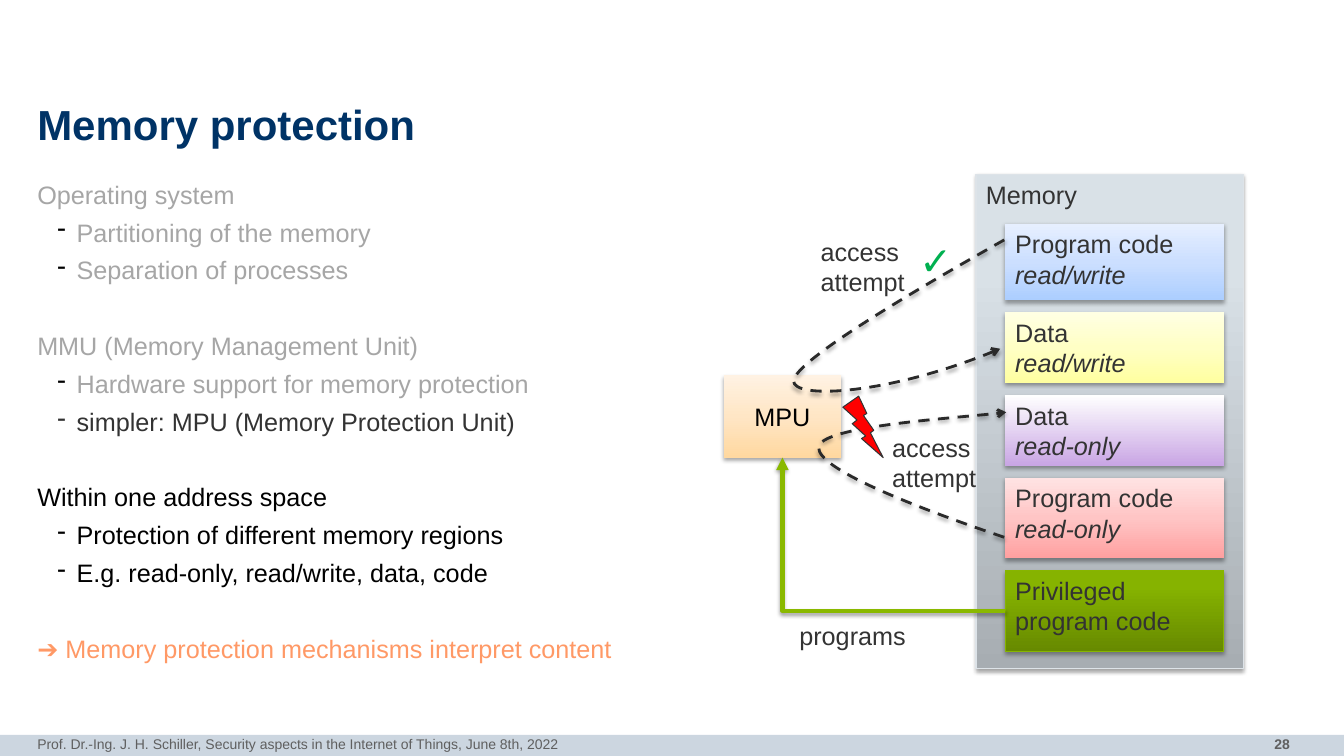
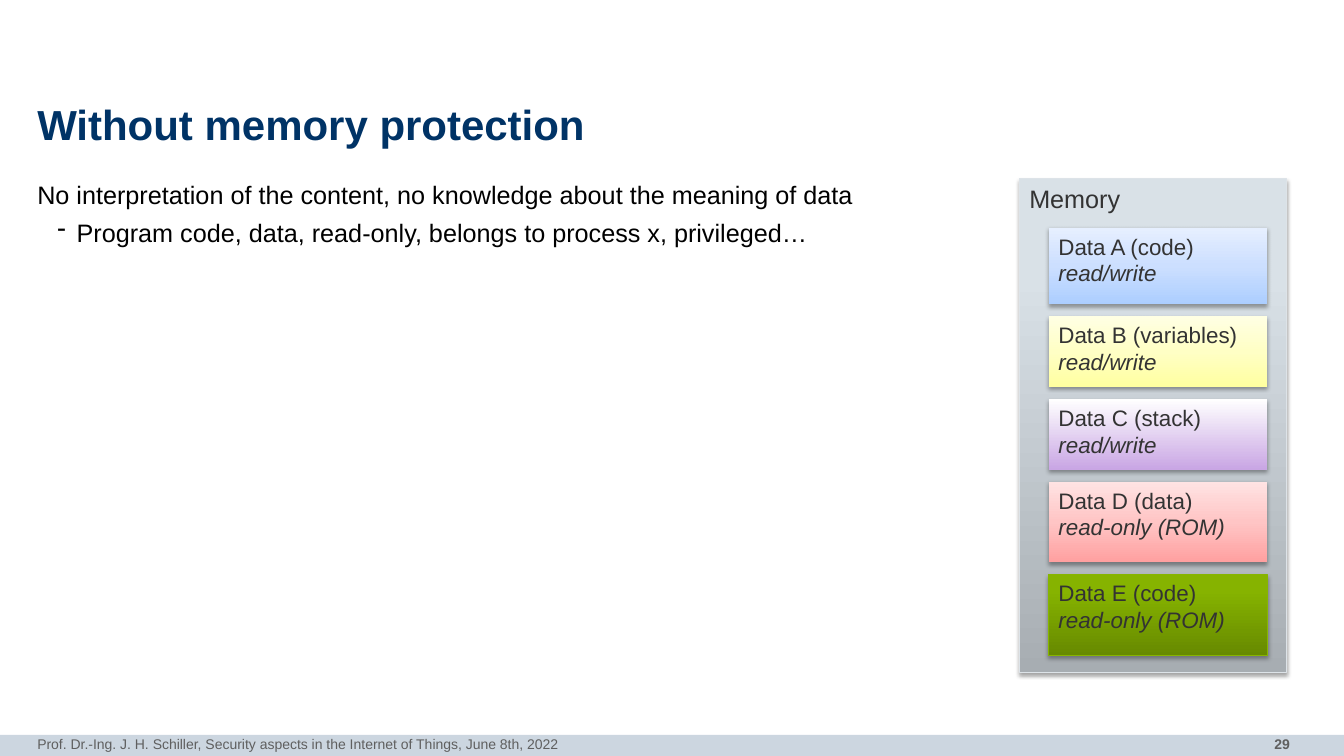
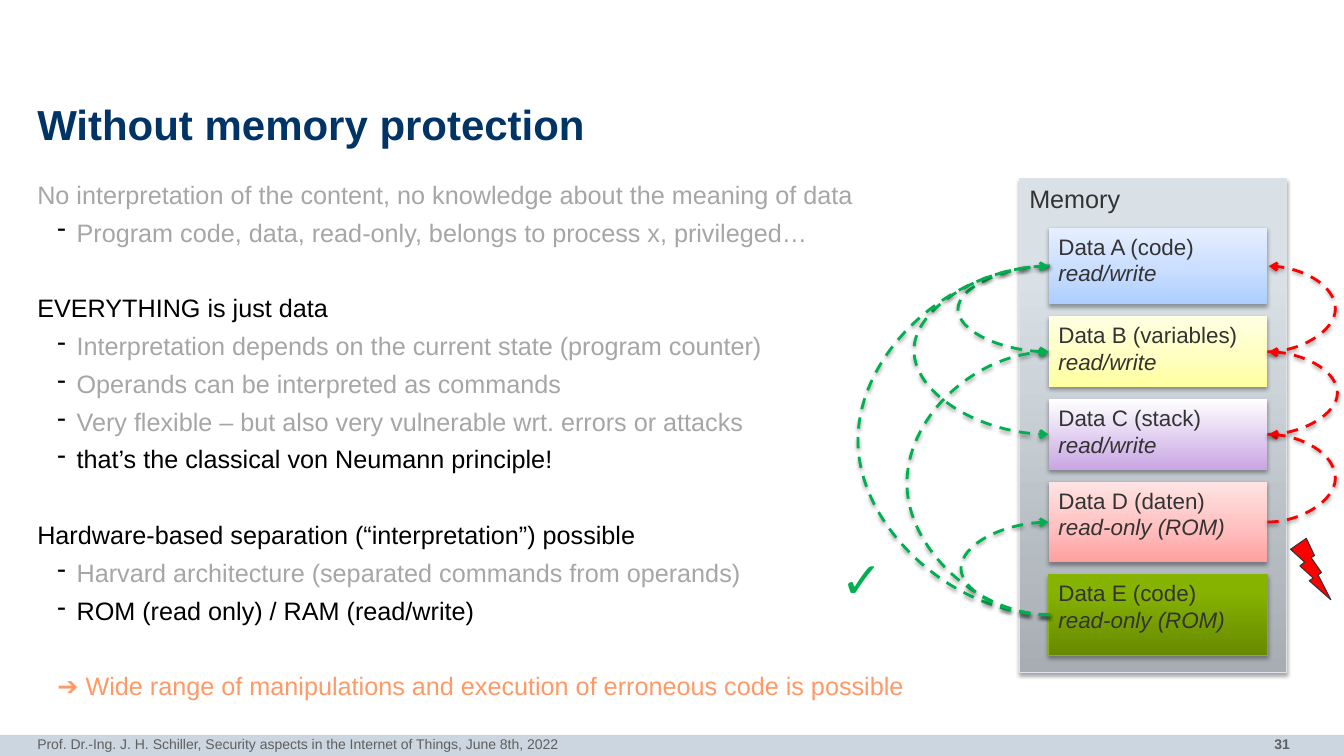
import dataclasses

import pptx
import pptx.dml.color
import pptx.enum.dml
import pptx.enum.shapes
import pptx.enum.text
import pptx.oxml
import pptx.oxml.ns
import pptx.util
from lxml import etree

qn = pptx.oxml.ns.qn
Pt = pptx.util.Pt
SHAPE = pptx.enum.shapes.MSO_SHAPE
CONNECTOR = pptx.enum.shapes.MSO_CONNECTOR
ALIGN = pptx.enum.text.PP_ALIGN
ANCHOR = pptx.enum.text.MSO_ANCHOR

COLUMNS, ROWS = 1333, 750
CELL = pptx.util.Inches(0.01)
LEFT_SITE, BOTTOM_SITE, RIGHT_SITE = 1, 2, 3
FOOTER = "Prof. Dr.-Ing. J. H. Schiller, Security aspects in the Internet of Things, June 8th, 2022"


@dataclasses.dataclass(frozen=True)
class Theme:
    """Colours, gradients and type sizes of the deck."""
    font: str = "Arial"
    title: str = "003366"
    black: str = "000000"
    dark: str = "333333"
    muted: str = "A6A6A6"
    accent: str = "FF9966"
    band: str = "CCD6E0"
    footer: str = "5F5F5F"
    dash: str = "2A2A2A"
    allowed: str = "00B050"
    denied: str = "FF0000"
    program: str = "8AB900"
    panel_line: str = "DDE3E8"
    green_line: str = "87B500"
    grey: tuple = ((0, "A7ADB2"), (80, "D9E1E7"), (100, "DAE2E9"))
    blue: tuple = ((0, "ACCEFF"), (50, "CCDFFF"), (100, "E6EFFF"))
    yellow: tuple = ((0, "FFFFA0"), (50, "FFFFC5"), (100, "FFFFE3"))
    purple: tuple = ((0, "C9A6E4"), (100, "FFFFFF"))
    red: tuple = ((0, "FFA0A0"), (50, "FFC5C5"), (100, "FFE3E3"))
    green: tuple = ((0, "678A00"), (80, "86B300"), (100, "86B400"))
    orange: tuple = ((0, "FFD8A0"), (50, "FFE6C5"), (100, "FFF2E3"))
    title_size: int = 30
    body_size: int = 18
    block_size: int = 16
    footer_size: int = 10


T = Theme()


@dataclasses.dataclass(frozen=True)
class Box:
    """A region in grid cells."""
    x: float
    y: float
    w: float
    h: float

    def sub(self, dx, dy, w, h):
        """Return a region offset from this one's corner."""
        return Box(self.x + dx, self.y + dy, w, h)

    def emu(self):
        """Return left, top, width and height as lengths."""
        return [round(v * CELL) for v in (self.x, self.y, self.w, self.h)]


def rgb(code):
    """Return a colour object."""
    return pptx.dml.color.RGBColor.from_string(code)


def add_run(p, text, size, color, bold=False, italic=False):
    """Add styled runs, with a line break at each newline."""
    for i, part in enumerate(text.split("\n")):
        if i:
            p.add_line_break()
        r = p.add_run()
        r.text = part
        r.font.name = T.font
        r.font.size = Pt(size)
        r.font.bold = bold
        r.font.italic = italic
        r.font.color.rgb = rgb(color)


def next_paragraph(tf, i):
    """Return the first paragraph or a new one."""
    return tf.add_paragraph() if i else tf.paragraphs[0]


def add_text(s, box, lines, size, color, bold=False, wrap=False, insets=None,
             anchor=ANCHOR.TOP, align=None, spacing=None):
    """Add a text box with one paragraph per line."""
    tf = s.shapes.add_textbox(*box.emu()).text_frame
    tf.word_wrap = wrap
    tf.vertical_anchor = anchor
    if not wrap:
        tf.auto_size = pptx.enum.text.MSO_AUTO_SIZE.SHAPE_TO_FIT_TEXT
    if insets is not None:
        tf.margin_left = tf.margin_right = 0
        tf.margin_top = tf.margin_bottom = insets * CELL
    for i, line in enumerate(lines):
        p = next_paragraph(tf, i)
        p.alignment = align
        p.line_spacing = spacing
        add_run(p, line, size, color, bold)
    return tf


def add_shadow(sp, alpha=35, dist=1.8):
    """Give a shape or connector a soft shadow below."""
    props = sp._element.spPr
    effects = props.find(qn("a:effectLst"))
    if effects is None:
        effects = etree.SubElement(props, qn("a:effectLst"))
    shadow = etree.SubElement(effects, qn("a:outerShdw"), blurRad=str(Pt(3.1)),
                              dist=str(Pt(dist)), dir="5400000", rotWithShape="0")
    color = etree.SubElement(shadow, qn("a:srgbClr"), val=T.black)
    etree.SubElement(color, qn("a:alpha"), val=str(alpha * 1000))


def add_block(s, box, stops, lines, size, line=None, color=T.dark,
              anchor=ANCHOR.TOP, align=ALIGN.LEFT):
    """Add a gradient rectangle; lines after the first are italic."""
    sp = s.shapes.add_shape(SHAPE.RECTANGLE, *box.emu())
    sp.shadow.inherit = False
    sp.fill.gradient()
    sp.fill.gradient_angle = 90
    gs_list = sp._element.spPr.find(".//" + qn("a:gsLst"))
    for gs in list(gs_list):
        gs_list.remove(gs)
    for pos, code in stops:
        gs = etree.SubElement(gs_list, qn("a:gs"), pos=str(pos * 1000))
        etree.SubElement(gs, qn("a:srgbClr"), val=code)
    if line:
        sp.line.color.rgb = rgb(line)
        sp.line.width = Pt(0.75)
    else:
        sp.line.fill.background()
    add_shadow(sp)
    tf = sp.text_frame
    tf.word_wrap = False
    tf.vertical_anchor = anchor
    for i, text in enumerate(lines):
        p = next_paragraph(tf, i)
        p.alignment = align
        add_run(p, text, size, color, italic=i > 0)
    return sp


def style_arrow(sp, color, width=2, head="arrow", dashed=True):
    """Set line, arrowhead and shadow of an arrow."""
    sp.line.color.rgb = rgb(color)
    sp.line.width = Pt(width)
    if dashed:
        sp.line.dash_style = pptx.enum.dml.MSO_LINE.DASH
    etree.SubElement(sp.line._get_or_add_ln(), qn("a:tailEnd"), type=head)
    add_shadow(sp, 38, 1.6)


def add_link(s, kind, start, start_site, end, end_site):
    """Add a connector glued to two shapes."""
    c = s.shapes.add_connector(kind, 0, 0, 0, 0)
    c.begin_connect(start, start_site)
    c.end_connect(end, end_site)
    return c


def orient(c, turned, flipped):
    """Set half turn and vertical flip of a connector."""
    xfrm = c._element.spPr.find(qn("a:xfrm"))
    xfrm.attrib.pop("flipH", None)
    xfrm.set("rot", "10800000" if turned else "0")
    xfrm.set("flipV", "1" if flipped else "0")


def set_geometry(c, preset, **guides):
    """Set preset geometry and adjustments of a connector."""
    geom = c._element.spPr.find(qn("a:prstGeom"))
    geom.set("prst", preset)
    av = geom.find(qn("a:avLst"))
    if av is None:
        av = etree.SubElement(geom, qn("a:avLst"))
    for name, value in guides.items():
        etree.SubElement(av, qn("a:gd"), name=name, fmla=f"val {value}")


def add_side_arc(s, start, end, site, reach, color):
    """Link the same side of two blocks by an arc that reaches outwards."""
    c = add_link(s, CONNECTOR.CURVE, start, site, end, site)
    left_side = site == LEFT_SITE
    c.width = Pt(1)
    orient(c, left_side, (start.top < end.top) == left_side)
    set_geometry(c, "curvedConnector3", adj1=round(reach * CELL / Pt(1) * 100000))
    style_arrow(c, color)


def add_curve(s, box, points, color):
    """Draw a Bézier arrow through a start point and triples of points."""
    pts = [tuple(box.sub(dx, dy, 0, 0).emu()[:2]) for dx, dy in points]
    fb = s.shapes.build_freeform(*pts[0])
    fb.add_line_segments(pts[1:], close=False)
    sp = fb.convert_to_shape()
    outline = sp._element.spPr.find(".//" + qn("a:path"))
    segments = outline.findall(qn("a:lnTo"))
    for i in range(0, len(segments), 3):
        bezier = etree.SubElement(outline, qn("a:cubicBezTo"))
        for segment in segments[i:i + 3]:
            bezier.append(segment[0])
            outline.remove(segment)
    sp.shadow.inherit = False
    sp.fill.background()
    style_arrow(sp, color)


def add_bolt(s, box):
    """Add the red bolt that marks a refused access."""
    sp = s.shapes.add_shape(SHAPE.LIGHTNING_BOLT, *box.emu())
    sp.shadow.inherit = False
    sp.fill.solid()
    sp.fill.fore_color.rgb = rgb(T.denied)
    sp.line.color.rgb = rgb(T.dark)
    sp.line.width = Pt(0.75)


def add_body(s, box, lines):
    """Write heads, dashed items and leads, with a gap before each group."""
    tf = add_text(s, box, [], T.body_size, T.black, wrap=True, insets=0)
    for i, (kind, text, color) in enumerate(lines):
        p = next_paragraph(tf, i)
        p.line_spacing = 1.02
        if i:
            p.space_before = Pt(5 if kind == "item" else 32)
        if kind != "head":
            p.level = 1
            props = p._p.get_or_add_pPr()
            props.set("marL", str((39 if kind == "item" else 20) * CELL))
            props.set("indent", str((-19 if kind == "item" else 0) * CELL))
        if kind == "item":
            bullet = etree.SubElement(props, qn("a:buClr"))
            etree.SubElement(bullet, qn("a:srgbClr"),
                             val=T.dark if color == T.dark else T.black)
            etree.SubElement(props, qn("a:buChar"), char="-")
        add_run(p, text, T.body_size, color)


def add_frame(prs, title, number, lines):
    """Add a slide with band, footer, number, title and body."""
    s = prs.slides.add_slide(prs.slide_layouts[6])
    page = Box(0, 0, COLUMNS, ROWS)
    band = s.shapes.add_shape(SHAPE.RECTANGLE, *page.sub(0, 729, COLUMNS, 21).emu())
    band.shadow.inherit = False
    band.fill.solid()
    band.fill.fore_color.rgb = rgb(T.band)
    band.line.fill.background()
    add_text(s, page.sub(1110, 725, 179, 26), [str(number)], T.footer_size, T.footer,
             bold=True, wrap=True, align=ALIGN.RIGHT)
    add_text(s, page.sub(37, 103, 1260, 47), [title], T.title_size, T.title,
             bold=True, wrap=True, insets=0, anchor=ANCHOR.MIDDLE, spacing=0.85)
    add_body(s, page.sub(37, 177, 1260, 532), lines)
    add_text(s, page.sub(37, 725, 1060, 25), [FOOTER], T.footer_size, T.footer,
             wrap=True, insets=5)
    return s


def add_memory(s, box, labels, size):
    """Stack the five memory blocks in a panel and return them."""
    add_block(s, box, T.grey, ["Memory"], T.body_size, T.panel_line)
    fills = (T.blue, T.yellow, T.purple, T.red, T.green)
    heights = (76, 70, 70, 80, 80)
    blocks, top = [], 49
    for lines, stops, height in zip(labels, fills, heights):
        line = T.green_line if stops == T.green else None
        blocks.append(add_block(s, box.sub(29, top, 217, height), stops, lines, size, line))
        top += height + 12
    return blocks


def add_access(s, box, label, points):
    """Draw one access attempt with its label."""
    add_curve(s, box, points, T.dash)
    add_text(s, box.sub(*label, 104, 71), ["access", "attempt"], T.body_size, T.dark)


def add_mpu(s, box, privileged):
    """Draw the MPU, the link that programs it and both access attempts."""
    mpu = add_block(s, box.sub(0, 143, 116, 82), T.orange, ["MPU"], T.body_size,
                    color=T.black, anchor=ANCHOR.MIDDLE, align=ALIGN.CENTER)
    c = add_link(s, CONNECTOR.ELBOW, privileged, LEFT_SITE, mpu, BOTTOM_SITE)
    orient(c, True, False)
    set_geometry(c, "bentConnector2")
    style_arrow(c, T.program, 3, "triangle", dashed=False)
    add_text(s, box.sub(65, 381, 127, 40), ["programs"], T.body_size, T.dark)

    refused = box.sub(94, 164, 186, 140)
    add_access(s, refused, (63, 31), [(184, 140), (92, 109), (-1, 72), (0, 51),
                                      (0, 30), (149, 21), (186, 16)])
    add_bolt(s, refused.sub(24, 0, 40, 61))

    granted = box.sub(69, 0, 209, 159)
    add_access(s, granted, (17, 0), [(209, 9), (99, 71), (1, 131), (0, 149),
                                     (0, 167), (95, 163), (205, 117)])
    add_text(s, granted.sub(115, 1, 51, 57), ["✓"], 28, T.allowed)


def add_flows(s, box, blocks):
    """Draw allowed arcs left of the blocks and refused arcs right of them."""
    a, b, c, d, e = blocks
    allowed = ((a, b, 92), (e, b, 143), (a, c, 136), (e, a, 192), (e, d, 89))
    refused = ((b, a, 68), (d, c, 68), (c, b, 70))
    for start, end, reach in allowed:
        add_side_arc(s, start, end, LEFT_SITE, reach, T.allowed)
    for start, end, reach in refused:
        add_side_arc(s, start, end, RIGHT_SITE, reach, T.denied)
    add_bolt(s, box.sub(269, 357, 40, 61))
    add_text(s, box.sub(-187, 362, 60, 71), ["✓"], 36, T.allowed)


def protection_slide(prs):
    """Build the slide on memory protection."""
    s = add_frame(prs, "Memory protection", 28, [
        ("head", "Operating system", T.muted),
        ("item", "Partitioning of the memory", T.muted),
        ("item", "Separation of processes", T.muted),
        ("head", "MMU (Memory Management Unit)", T.muted),
        ("item", "Hardware support for memory protection", T.muted),
        ("item", "simpler: MPU (Memory Protection Unit)", T.dark),
        ("head", "Within one address space", T.black),
        ("item", "Protection of different memory regions", T.black),
        ("item", "E.g. read-only, read/write, data, code", T.black),
        ("head", "➔ Memory protection mechanisms interpret content", T.accent),
    ])
    labels = [("Program code", "read/write"), ("Data", "read/write"), ("Data", "read-only"),
              ("Program code", "read-only"), ("Privileged\nprogram code",)]
    blocks = add_memory(s, Box(968, 173, 265, 490), labels, T.body_size)
    add_mpu(s, Box(718, 229, 279, 422), blocks[-1])


def unprotected_slide(prs, number, intro_color, d_name, more=(), flows=False):
    """Build a slide on memory without protection."""
    s = add_frame(prs, "Without memory protection", number, [
        ("head", "No interpretation of the content, no knowledge about the meaning of data",
         intro_color),
        ("item", "Program code, data, read-only, belongs to process x, privileged…", intro_color),
        *more,
    ])
    labels = [("Data A (code)", "read/write"), ("Data B (variables)", "read/write"),
              ("Data C (stack)", "read/write"), (f"Data D ({d_name})", "read-only (ROM)"),
              ("Data E (code)", "read-only (ROM)")]
    panel = Box(1011, 177, 265, 490)
    blocks = add_memory(s, panel, labels, T.block_size)
    if flows:
        add_flows(s, panel, blocks)


def main():
    """Build and save the deck."""
    prs = pptx.Presentation()
    prs.slide_width, prs.slide_height = COLUMNS * CELL, ROWS * CELL
    protection_slide(prs)
    unprotected_slide(prs, 29, T.black, "data")
    unprotected_slide(prs, 31, T.muted, "daten", [
        ("head", "EVERYTHING is just data", T.black),
        ("item", "Interpretation depends on the current state (program counter)", T.muted),
        ("item", "Operands can be interpreted as commands", T.muted),
        ("item", "Very flexible – but also very vulnerable wrt. errors or attacks", T.muted),
        ("item", "that’s the classical von Neumann principle!", T.black),
        ("head", "Hardware-based separation (“interpretation”) possible", T.black),
        ("item", "Harvard architecture (separated commands from operands)", T.muted),
        ("item", "ROM (read only) / RAM (read/write)", T.black),
        ("lead", "➔ Wide range of manipulations and execution of erroneous code is possible",
         T.accent),
    ], flows=True)
    prs.save("out.pptx")


if __name__ == "__main__":
    main()
